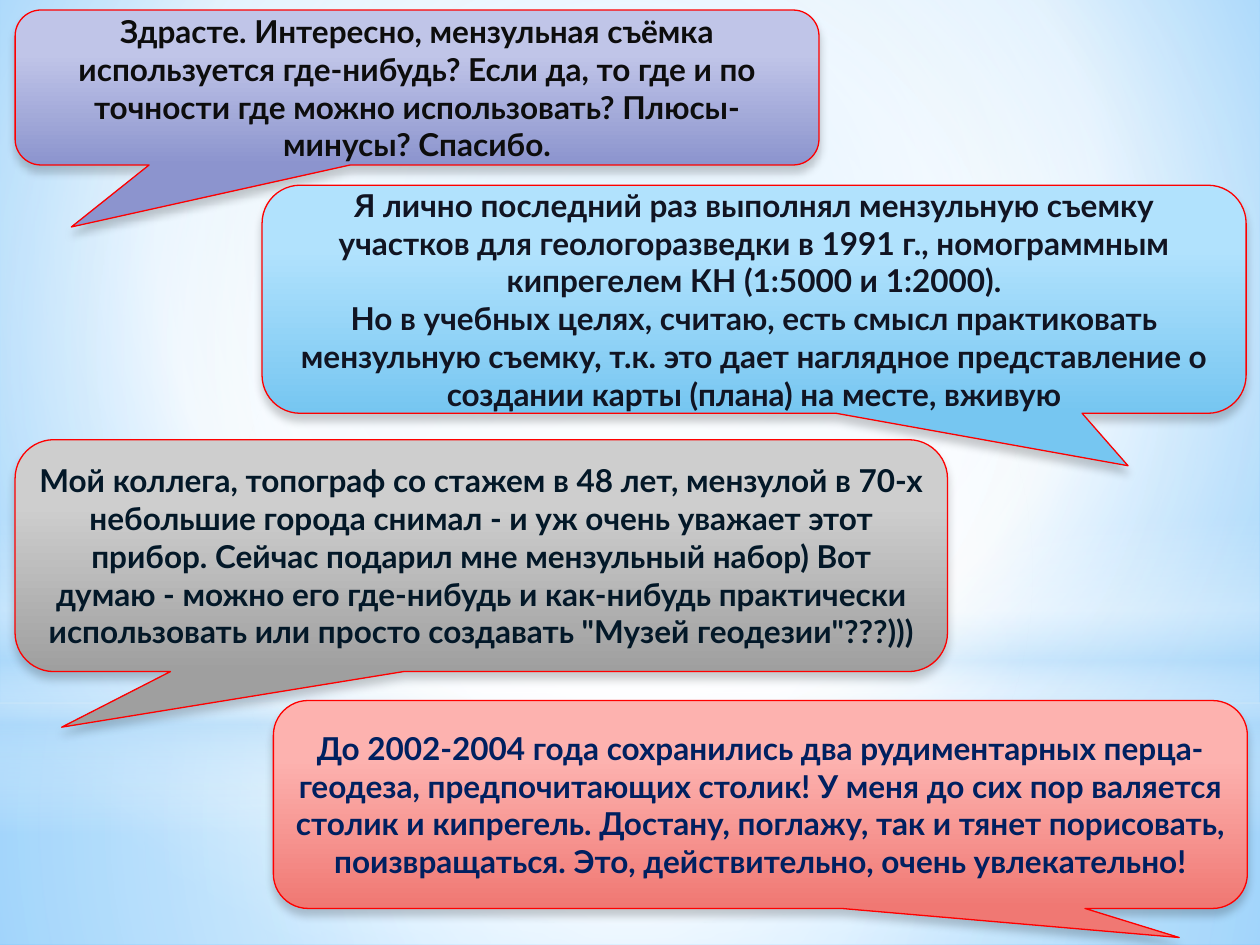
"""Build a slide with four forum replies about plane-table surveying in speech bubbles."""
from lxml import etree
from pptx import Presentation
from pptx.dml.color import RGBColor
from pptx.enum.shapes import MSO_SHAPE
from pptx.enum.text import MSO_ANCHOR, PP_ALIGN
from pptx.oxml.ns import qn
from pptx.util import Inches, Pt

RECTANGLE = MSO_SHAPE.RECTANGLE
OVAL = MSO_SHAPE.OVAL
BUBBLE = MSO_SHAPE.ROUNDED_RECTANGULAR_CALLOUT
MIDDLE = MSO_ANCHOR.MIDDLE
CENTER = PP_ALIGN.CENTER

FONT = "Lato"
TEXT_SIZE = Pt(18)
CORNER = 0.167
RED = RGBColor(0xFF, 0x00, 0x00)
BLACK = RGBColor(0x00, 0x00, 0x00)
WHITE = RGBColor(0xFF, 0xFF, 0xFF)
PALE_BLUE = RGBColor(0xB4, 0xDC, 0xFA)
LIGHT_SKY = RGBColor(0x9E, 0xD5, 0xFF)
DEEP_SKY = RGBColor(0x5B, 0xB9, 0xFF)

SKY_STOPS = [(0, LIGHT_SKY, 100), (60, WHITE, 100), (100, DEEP_SKY, 100)]
SKY_FOCUS = (20, 10, 20, 60)
MID_FOCUS = (50, 50, 50, 50)

GLOWS = [
    (RECTANGLE, (0, 5.58, 10, 1.92), MID_FOCUS,
     [(0, WHITE, 91), (37, WHITE, 76), (100, PALE_BLUE, 79)]),
    (RECTANGLE, (0, 0, 10, 5.58), MID_FOCUS,
     [(0, WHITE, 89), (48, WHITE, 62), (100, PALE_BLUE, 79)]),
    (RECTANGLE, (0, 4.12, 10, 2.5), None,
     [(0, WHITE, 0), (29, WHITE, 30), (45, PALE_BLUE, 40),
      (55, WHITE, 26), (65, PALE_BLUE, 60), (100, WHITE, 0)]),
    (OVAL, (0, 1.75, 10, 5.58), MID_FOCUS,
     [(0, WHITE, 100), (56, WHITE, 0)]),
]

REPLIES = [
    {"box": (0.12, 0.08, 6.38, 1.23), "tail": (-0.43, 0.9),
     "top": RGBColor(0xC0, 0xC5, 0xE8), "bottom": RGBColor(0x8C, 0x94, 0xCE),
     "ink": RGBColor(0x0D, 0x0D, 0x0D),
     "lines": ["Здрасте. Интересно, мензульная съёмка используется где-нибудь? "
               "Если да, то где и по точности где можно использовать? "
               "Плюсы-минусы? Спасибо."]},
    {"box": (2.08, 1.47, 7.81, 1.81), "tail": (0.38, 0.73),
     "top": RGBColor(0xB1, 0xE2, 0xFD), "bottom": RGBColor(0x76, 0xC6, 0xF1),
     "ink": RGBColor(0x11, 0x14, 0x22),
     "lines": ["Я лично последний раз выполнял мензульную съемку участков для "
               "геологоразведки в 1991 г., номограммным кипрегелем КН "
               "(1:5000 и 1:2000).",
               "Но в учебных целях, считаю, есть смысл практиковать мензульную "
               "съемку, т.к. это дает наглядное представление о создании карты "
               "(плана) на месте, вживую"]},
    {"box": (0.12, 3.49, 7.4, 1.84), "tail": (-0.45, 0.74),
     "top": RGBColor(0xCE, 0xCE, 0xCE), "bottom": RGBColor(0x9F, 0x9F, 0x9F),
     "ink": RGBColor(0x03, 0x18, 0x28),
     "lines": ["Мой коллега, топограф со стажем в 48 лет, мензулой в 70-х "
               "небольшие города снимал - и уж очень уважает этот прибор. "
               "Сейчас подарил мне мензульный набор) Вот думаю - можно его "
               "где-нибудь и как-нибудь практически использовать или просто "
               "создавать \"Музей геодезии\"???)))"]},
    {"box": (2.17, 5.56, 7.73, 1.65), "tail": (0.43, 0.64),
     "top": RGBColor(0xFD, 0xB2, 0xAF), "bottom": RGBColor(0xF0, 0x78, 0x73),
     "ink": RGBColor(0x00, 0x20, 0x60),
     "lines": ["До 2002-2004 года сохранились два рудиментарных перца-геодеза, "
               "предпочитающих столик! У меня до сих пор валяется столик и "
               "кипрегель. Достану, поглажу, так и тянет порисовать, "
               "поизвращаться. Это, действительно, очень увлекательно!"]},
]


def add_node(parent, tag, **attributes):
    texts = {key: str(value) for key, value in attributes.items()}
    return etree.SubElement(parent, qn(tag), texts)


def add_color(parent, color, opacity):
    node = add_node(parent, "a:srgbClr", val=color)
    if opacity < 100:
        add_node(node, "a:alpha", val=opacity * 1000)


def paint_gradient(owner, fill, stops, focus=None):
    fill.gradient()
    gradient = owner.element.xpath(".//a:gradFill")[0]
    gradient.clear()
    gradient.set("rotWithShape", "1")
    stop_list = add_node(gradient, "a:gsLst")
    for position, color, opacity in stops:
        add_color(add_node(stop_list, "a:gs", pos=position * 1000), color, opacity)
    if focus:
        circle = add_node(gradient, "a:path", path="circle")
        edges = {side: inset * 1000 for side, inset in zip("ltrb", focus)}
        add_node(circle, "a:fillToRect", **edges)
    else:
        add_node(gradient, "a:lin", ang=90 * 60000, scaled=0)


def add_painted(slide, kind, box, stops, focus=None):
    shape = slide.shapes.add_shape(kind, *map(Inches, box))
    paint_gradient(shape, shape.fill, stops, focus)
    shape.line.fill.background()
    shape.shadow.inherit = False
    return shape


def write_reply(frame, lines, ink):
    frame.word_wrap = True
    frame.vertical_anchor = MIDDLE
    paragraph = frame.paragraphs[0]
    paragraph.alignment = CENTER
    for index, line in enumerate(lines):
        if index:
            paragraph.add_line_break()
        run = paragraph.add_run()
        run.text = line
        run.font.name = FONT
        run.font.size = TEXT_SIZE
        run.font.bold = True
        run.font.color.rgb = ink


def add_reply(slide, reply):
    stops = [(28, reply["top"], 100), (100, reply["bottom"], 100)]
    bubble = add_painted(slide, BUBBLE, reply["box"], stops)
    for index, value in enumerate((*reply["tail"], CORNER)):
        bubble.adjustments[index] = value
    bubble.line.color.rgb = RED
    bubble.line.width = Pt(0.75)
    effects = bubble.element.xpath("./p:spPr/a:effectLst")[0]
    shadow = add_node(effects, "a:outerShdw", blurRad=Pt(5), dist=Pt(4),
                      dir=90 * 60000, rotWithShape=0)
    add_color(shadow, BLACK, 20)
    write_reply(bubble.text_frame, reply["lines"], reply["ink"])


def main():
    deck = Presentation()
    deck.slide_width, deck.slide_height = Inches(10), Inches(7.5)
    slide = deck.slides.add_slide(deck.slide_layouts[6])
    paint_gradient(slide, slide.background.fill, SKY_STOPS, SKY_FOCUS)
    for kind, box, focus, stops in GLOWS:
        add_painted(slide, kind, box, stops, focus)
    for reply in REPLIES:
        add_reply(slide, reply)
    deck.save("out.pptx")


if __name__ == "__main__":
    main()
